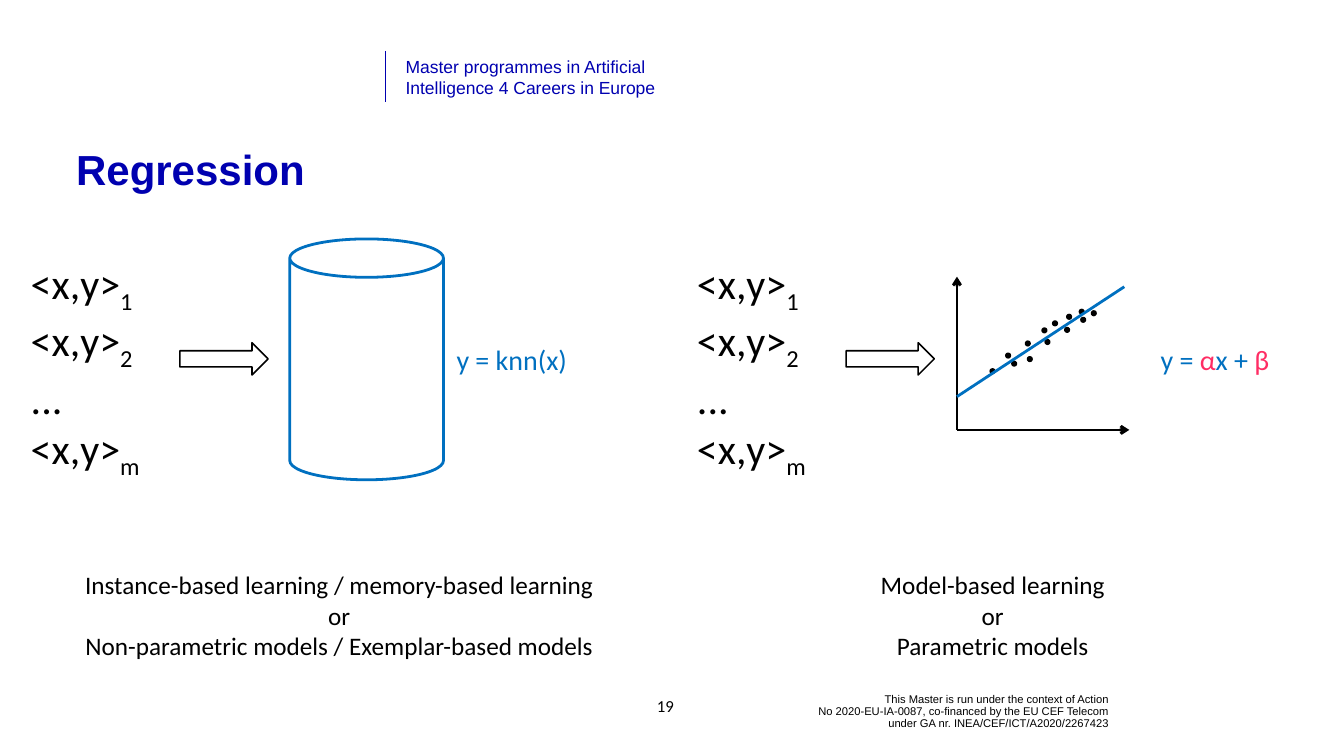
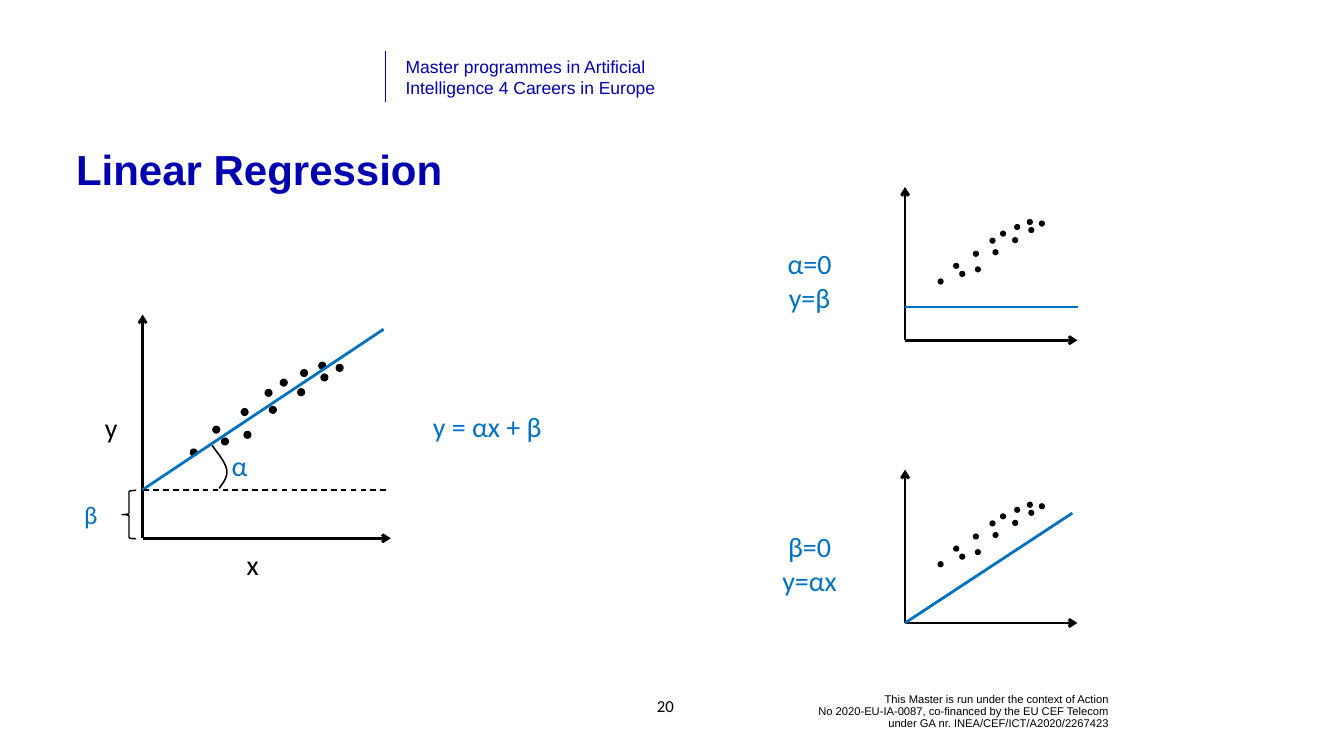
from copy import deepcopy
from dataclasses import dataclass

from lxml import etree
from pptx import Presentation
from pptx import util as u
from pptx.dml.color import RGBColor
from pptx.enum import dml, shapes, text
from pptx.oxml import ns

KIND = shapes.MSO_SHAPE
LEFT, MID, RIGHT = text.PP_ALIGN.LEFT, text.PP_ALIGN.CENTER, text.PP_ALIGN.RIGHT


@dataclass(frozen=True)
class Theme:
    navy: str = "0000B0"
    blue: str = "0070C0"
    pink: str = "FF2D64"
    black: str = "000000"
    white: str = "FFFFFF"
    head: str = "Arial"
    body: str = "Calibri"
    foot: int = 16
    page: int = 24
    band: int = 25
    note: int = 36
    label: int = 40
    big: int = 60
    thin: float = 0.5
    fine: float = 2
    edge: float = 2.25
    bold: float = 4


# Dots of the scatter plot: distance right of and above the origin
DOTS = [
    (0.97, 1.52), (1.09, 1.36), (1.36, 1.76), (1.75, 1.79), (0.66, 1.21),
    (1.69, 2.02), (2.14, 2.03), (1.9, 2.16), (2.46, 2.23), (2.18, 2.29),
    (2.43, 2.39), (1.4, 1.45), (2.67, 2.36),
]
DOT = 0.09
SIDE, RISE = 3.42, 3.04
FIT = ((0, 0.66), (3.32, 2.84))
FLAT = ((0, 0.66), (3.44, 0.66))
STEEP = ((0, 0), (3.32, 2.18))


def inch(*sizes):
    return [u.Inches(size) for size in sizes]


class Deck:
    def __init__(self, theme):
        self.theme = theme
        self.file = Presentation()
        self.file.slide_width, self.file.slide_height = inch(26.67, 15)
        self.slide = None

    def font(self, run, size, hue, face=None, bold=False):
        run.font.size = u.Pt(size)
        run.font.name = face or self.theme.body
        run.font.bold = bold
        run.font.color.rgb = RGBColor.from_string(hue)

    def fill(self, frame, words, size, hue, align=LEFT, face=None, bold=False):
        """Put words in a frame and format each run and line break."""
        frame.text = words
        for para in frame.paragraphs:
            para.alignment = align
            for run in para.runs:
                self.font(run, size, hue, face, bold)
            for gap in para._p.findall(ns.qn("a:br")):
                gap.append(deepcopy(para.runs[0]._r.rPr))

    def add(self, para, words, size, hue):
        run = para.add_run()
        run.text = words
        self.font(run, size, hue)
        return run

    def text(self, at, words, size, hue, align=LEFT, face=None,
             anchor=text.MSO_ANCHOR.TOP):
        frame = self.slide.shapes.add_textbox(*inch(*at)).text_frame
        frame.word_wrap = True
        frame.vertical_anchor = anchor
        self.fill(frame, words, size, hue, align, face)
        return frame

    def label(self, at, words, size=None, hue=None, align=MID, **more):
        """Text box with narrow margins that fits its text."""
        theme = self.theme
        frame = self.text(at, words, size or theme.label, hue or theme.blue,
                          align, **more)
        frame.margin_left = frame.margin_right = u.Inches(0.06)
        frame.margin_top = frame.margin_bottom = u.Inches(0.06)
        frame.auto_size = text.MSO_AUTO_SIZE.SHAPE_TO_FIT_TEXT
        return frame

    def paint(self, shape, fill, hue, width):
        shape.shadow.inherit = False
        if fill:
            shape.fill.solid()
            shape.fill.fore_color.rgb = RGBColor.from_string(fill)
        else:
            shape.fill.background()
        shape.line.color.rgb = RGBColor.from_string(hue)
        shape.line.width = u.Pt(width)

    def shape(self, kind, at, fill, hue, width):
        shape = self.slide.shapes.add_shape(kind, *inch(*at))
        self.paint(shape, fill, hue, width)

    def line(self, start, end, hue, width, arrow=False, dash=False):
        line = self.slide.shapes.add_connector(
            shapes.MSO_CONNECTOR.STRAIGHT, *inch(*start, *end))
        line.line.color.rgb = RGBColor.from_string(hue)
        line.line.width = u.Pt(width)
        if dash:
            line.line.dash_style = dml.MSO_LINE.DASH
        if arrow:
            etree.SubElement(line.line._ln, ns.qn("a:tailEnd"), type="arrow")
        etree.SubElement(line._element.spPr, ns.qn("a:effectLst"))

    def curve(self, points, hue, width):
        """Open Bezier curve: a start point, then three points a segment."""
        start, *rest = [inch(*point) for point in points]
        pen = self.slide.shapes.build_freeform(*start)
        pen.add_line_segments(rest, close=False)
        shape = pen.convert_to_shape()
        self.paint(shape, None, hue, width)
        steps = shape._element.xpath(".//a:lnTo")
        for first in range(0, len(steps), 3):
            bend = etree.Element(ns.qn("a:cubicBezTo"))
            steps[first].addprevious(bend)
            for step in steps[first:first + 3]:
                bend.append(step[0])
                step.getparent().remove(step)

    def plot(self, left, base, trend, wide=1, high=1):
        """Axes, dots and trend line around an origin, scaled both ways."""
        theme = self.theme

        def place(point):
            return left + point[0] * wide, base - point[1] * high

        for tip in ((0, RISE), (SIDE, 0)):
            self.line((left, base), place(tip), theme.black, theme.bold,
                      arrow=True)
        for dot in DOTS:
            self.shape(KIND.OVAL, (*place(dot), DOT * wide, DOT * wide),
                       theme.black, theme.black, theme.edge)
        self.line(*map(place, trend), theme.blue, theme.bold)

    def start(self, title, page):
        """New slide with its footer, header band, page number and title."""
        theme = self.theme
        middle = text.MSO_ANCHOR.MIDDLE
        self.slide = self.file.slides.add_slide(self.file.slide_layouts[5])
        foot = self.text(
            (15.02, 13.74, 7.08, 0.76),
            "This Master is run under the context of Action\v"
            "No 2020-EU-IA-0087, co-financed by the EU CEF Telecom\v"
            "under GA nr. INEA/CEF/ICT/A2020/2267423",
            theme.foot, theme.black, RIGHT, theme.head, middle)
        foot.paragraphs[0].line_spacing = 0.9
        self.line((7.65, 1.01), (7.65, 2.03), theme.navy, theme.thin)
        self.text((7.95, 1.06, 6.37, 0.94),
                  "Master programmes in Artificial\v"
                  "Intelligence 4 Careers in Europe",
                  theme.band, theme.navy, face=theme.head)
        self.text((12.65, 13.61, 1.11, 0.8), str(page), theme.page,
                  theme.black, MID, anchor=middle)
        head = self.slide.shapes.title
        head.left, head.top, head.width, head.height = inch(
            1.41, 2.83, 23.61, 2.29)
        frame = head.text_frame
        frame.auto_size = text.MSO_AUTO_SIZE.NONE
        frame.vertical_anchor = text.MSO_ANCHOR.TOP
        self.fill(frame, title, theme.big, theme.navy, face=theme.head,
                  bold=True)
        frame.paragraphs[0].line_spacing = u.Pt(70)

    def pairs(self, left):
        """List of training pairs and the arrow to its model."""
        theme = self.theme
        frame = self.label((left, 5.05, 3.02, 4.15),
                           "<x,y>\n<x,y>\n...\n<x,y>",
                           theme.big, theme.black, LEFT)
        for row, mark in zip((0, 1, 3), "12m"):
            run = self.add(frame.paragraphs[row], mark, theme.big, theme.black)
            run._r.get_or_add_rPr().set("baseline", "-25000")
        self.shape(KIND.RIGHT_ARROW, (left + 3.02, 6.8, 1.75, 0.64),
                   theme.white, theme.black, theme.edge)


def models(deck):
    theme = deck.theme
    deck.start("Regression", 19)
    deck.shape(KIND.CAN, (5.75, 4.74, 3.05, 4.78), theme.white, theme.blue,
               theme.bold)
    for left in (0.55, 13.77):
        deck.pairs(left)
    deck.label((9, 6.73, 4.04, 0.79), "y = knn(x)", align=LEFT)
    rule = deck.label((22.97, 6.73, 3.02, 0.79), "y = ", align=LEFT)
    for part, hue in (("α", theme.pink), ("x + ", theme.blue),
                      ("β", theme.pink)):
        deck.add(rule.paragraphs[0], part, theme.label, hue)
    deck.plot(18.99, 8.53, FIT)
    for left, width, words in (
        (1.53, 10.4, "Instance-based learning / memory-based learning\nor\n"
                     "Non-parametric models / Exemplar-based models"),
        (15.22, 8.96, "Model-based learning\nor\nParametric models"),
    ):
        deck.label((left, 11.24, width, 1.93), words, theme.note, theme.black,
                   anchor=text.MSO_ANCHOR.MIDDLE)


def linear(deck):
    theme = deck.theme
    deck.start("Linear Regression", 20)
    deck.label((8.53, 8.06, 4.33, 0.79), "y = αx + β", align=LEFT)
    deck.plot(2.83, 10.68, FIT, 1.44, 1.46)
    deck.line((2.85, 9.72), (7.69, 9.72), theme.black, theme.fine, dash=True)
    deck.shape(KIND.LEFT_BRACE, (2.42, 9.73, 0.28, 0.96), None, theme.black,
               theme.fine)
    deck.curve([(4.35, 9.69), (4.38, 9.63), (4.53, 9.49), (4.5, 9.32),
                (4.47, 9.15), (4.27, 8.93), (4.21, 8.84)],
               theme.black, theme.edge)
    deck.label((1.6, 9.85, 0.4, 0.72), "β", theme.note).word_wrap = False
    for left, top, sign, hue in ((4.27, 8.84, "α", theme.blue),
                                 (4.53, 10.8, "x", theme.black),
                                 (1.72, 8.08, "y", theme.black)):
        deck.label((left, top, 0.97, 0.78), sign, hue=hue)
    for base, words, trend in ((6.75, "α=0\ny=β", FLAT),
                               (12.36, "β=0\ny=αx", STEEP)):
        deck.label((15.3, base - 1.91, 1.53, 1.46), words)
        deck.plot(17.96, base, trend)


def main():
    deck = Deck(Theme())
    models(deck)
    linear(deck)
    deck.file.save("out.pptx")


if __name__ == "__main__":
    main()
